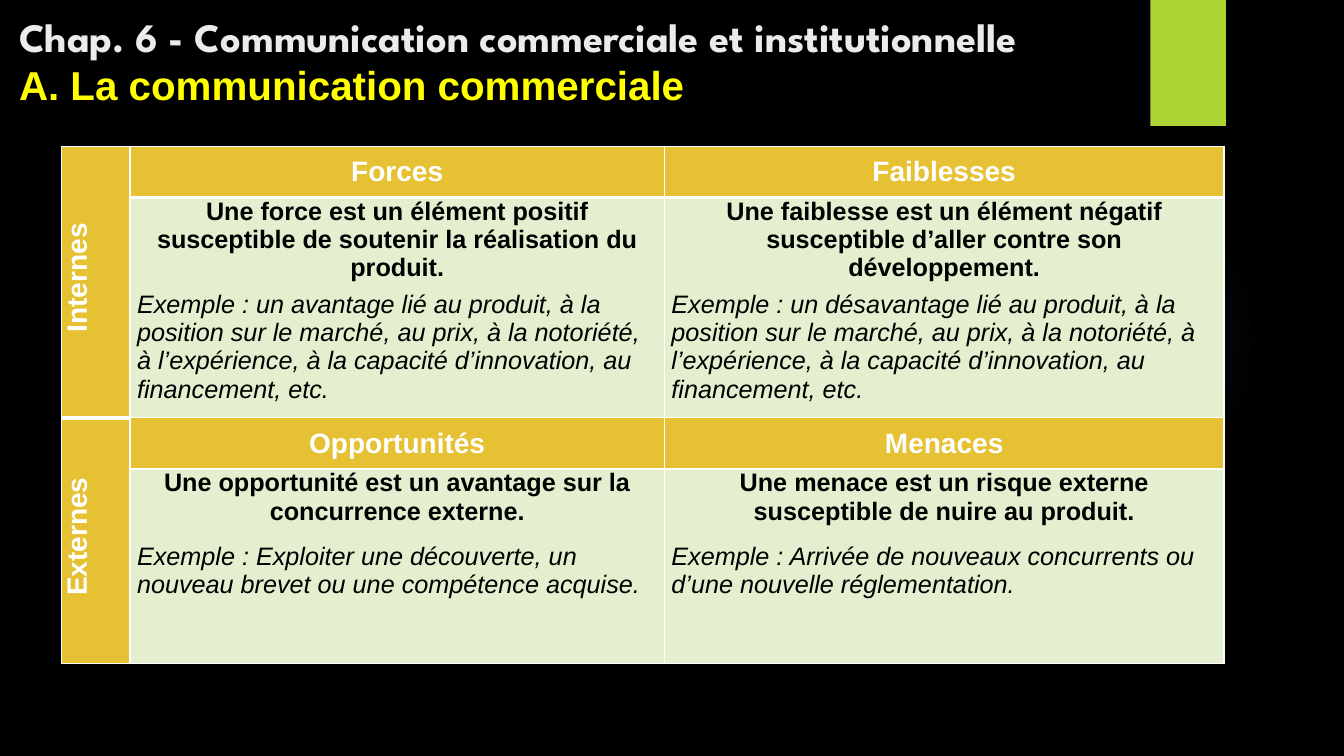
from lxml import etree
from pptx import Presentation
from pptx.dml.color import RGBColor
from pptx.enum.shapes import MSO_SHAPE
from pptx.enum.text import MSO_ANCHOR, PP_ALIGN
from pptx.oxml import parse_xml
from pptx.oxml.ns import nsdecls, qn
from pptx.util import Inches, Pt

BLACK = RGBColor(0x00, 0x00, 0x00)
WHITE = RGBColor(0xFF, 0xFF, 0xFF)
PALE = RGBColor(0xEB, 0xEB, 0xEB)
YELLOW = RGBColor(0xFF, 0xFF, 0x00)
LIME = RGBColor(0xAC, 0xD4, 0x33)
GOLD = RGBColor(0xE6, 0xC1, 0x33)
MINT = RGBColor(0xE3, 0xEF, 0xCE)
SKY = RGBColor(0x7A, 0xC4, 0xF0)
RECT, OVAL = MSO_SHAPE.RECTANGLE, MSO_SHAPE.OVAL
CENTER, LEFT = PP_ALIGN.CENTER, PP_ALIGN.LEFT
TOP, MIDDLE, BOTTOM = MSO_ANCHOR.TOP, MSO_ANCHOR.MIDDLE, MSO_ANCHOR.BOTTOM


def style(font, size, color, bold=True, italic=False, name="Arial"):
    font.name, font.size = name, Pt(size)
    font.bold, font.italic = bold, italic
    font.color.rgb = color


def frame(cell, fill, anchor, below=1):
    """Fill a cell and draw its white borders; below is the bottom width in points."""
    props = cell._tc.get_or_add_tcPr()
    for side, width in (("L", 1), ("R", 1), ("T", 1), ("B", below)):
        line = etree.SubElement(props, qn(f"a:ln{side}"), w=str(Pt(width)))
        paint = etree.SubElement(line, qn("a:solidFill"))
        etree.SubElement(paint, qn("a:srgbClr"), val=str(WHITE))
    cell.fill.solid()
    cell.fill.fore_color.rgb = fill
    cell.vertical_anchor = anchor
    cell.margin_left = cell.margin_right = Inches(0.07)
    cell.margin_top = cell.margin_bottom = 0


prs = Presentation()
prs.slide_width, prs.slide_height = Inches(13.33), Inches(7.5)
slide = prs.slides.add_slide(prs.slide_layouts[6])
slide.background.fill.solid()
slide.background.fill.fore_color.rgb = BLACK

# Faint glow and green tab
glow = slide.shapes.add_shape(OVAL, Inches(9.41), Inches(1.83), Inches(3.08), Inches(3.08))
glow.shadow.inherit = False
glow.line.fill.background()
stops = "".join(
    f'<a:gs pos="{spot * 1000}"><a:srgbClr val="{SKY}"><a:alpha val="{alpha * 1000}"/></a:srgbClr></a:gs>'
    for spot, alpha in ((0, 7), (36, 6), (69, 0)))
glow._element.spPr.find(qn("a:prstGeom")).addnext(parse_xml(
    f'<a:gradFill {nsdecls("a")}><a:gsLst>{stops}</a:gsLst><a:path path="circle">'
    '<a:fillToRect l="50000" t="50000" r="50000" b="50000"/></a:path></a:gradFill>'))

tab = slide.shapes.add_shape(RECT, Inches(11.41), 0, Inches(0.75), Inches(1.25))
tab.shadow.inherit = False
tab.fill.solid()
tab.fill.fore_color.rgb = LIME
tab.line.fill.background()

# Title
title = slide.shapes.add_textbox(Inches(0.09), 0, Inches(12.95), Inches(1.13)).text_frame
title.word_wrap = True
title.vertical_anchor = BOTTOM
para = title.paragraphs[0]
run = para.add_run()
run.text = "Chap. 6 - Communication commerciale et institutionnelle"
style(run.font, 28.8, PALE, name="League Spartan")
para.add_line_break()
run = para.add_run()
run.text = "A. La communication commerciale"
style(run.font, 28.8, YELLOW)

# SWOT table: side label, gap before each example, then (head, meaning, example) twice
SWOT = [
    ("Internes", 0, [
        ("Forces",
         "Une force est un élément positif susceptible de soutenir la réalisation du produit.",
         "Exemple : un avantage lié au produit, à la position sur le marché, au prix, "
         "à la notoriété, à l’expérience, à la capacité d’innovation, au financement, etc."),
        ("Faiblesses",
         "Une faiblesse est un élément négatif susceptible d’aller contre son développement.",
         "Exemple : un désavantage lié au produit, à la position sur le marché, au prix, "
         "à la notoriété, à l’expérience, à la capacité d’innovation, au financement, etc.")]),
    ("Externes", 6, [
        ("Opportunités",
         "Une opportunité est un avantage sur la concurrence externe.",
         "Exemple : Exploiter une découverte, un nouveau brevet ou une compétence acquise."),
        ("Menaces",
         "Une menace est un risque externe susceptible de nuire au produit.",
         "Exemple : Arrivée de nouveaux concurrents ou d’une nouvelle réglementation.")]),
]
WIDTHS = (0.68, 5.3, 5.55)
HEIGHTS = (0.51, 2.04, 0.51, 1.93)
table = slide.shapes.add_table(4, 3, Inches(0.61), Inches(1.45),
                               Inches(sum(WIDTHS)), Inches(sum(HEIGHTS))).table
table.first_row = table.horz_banding = False
for column, width in zip(table.columns, WIDTHS):
    column.width = Inches(width)
for row, height in zip(table.rows, HEIGHTS):
    row.height = Inches(height)

for half, (label, gap, parts) in enumerate(SWOT):
    top = 2 * half
    below = 1 if half else 3
    side = table.cell(top, 0)
    side.merge(table.cell(top + 1, 0))
    for row in (top, top + 1):
        frame(table.cell(row, 0), GOLD, MIDDLE, below)
    side._tc.tcPr.set("vert", "vert270")
    side.text = label
    para = side.text_frame.paragraphs[0]
    para.alignment = CENTER
    para._p.get_or_add_pPr().set("marL", str(Inches(0.08)))
    style(para.font, 20, WHITE)

    for col, (head, meaning, example) in enumerate(parts, 1):
        cell = table.cell(top, col)
        frame(cell, GOLD, MIDDLE, below)
        cell.text = head
        para = cell.text_frame.paragraphs[0]
        para.alignment = CENTER
        style(para.font, 20, WHITE)

        cell = table.cell(top + 1, col)
        frame(cell, MINT, TOP)
        cell.text = f"{meaning}\n{example}"
        first, second = cell.text_frame.paragraphs
        first.alignment, second.alignment = CENTER, LEFT
        first.space_after = second.space_after = Pt(6)
        second.space_before = Pt(gap)
        style(first.font, 18, BLACK)
        style(second.font, 18, BLACK, bold=False, italic=True)

prs.save("out.pptx")
